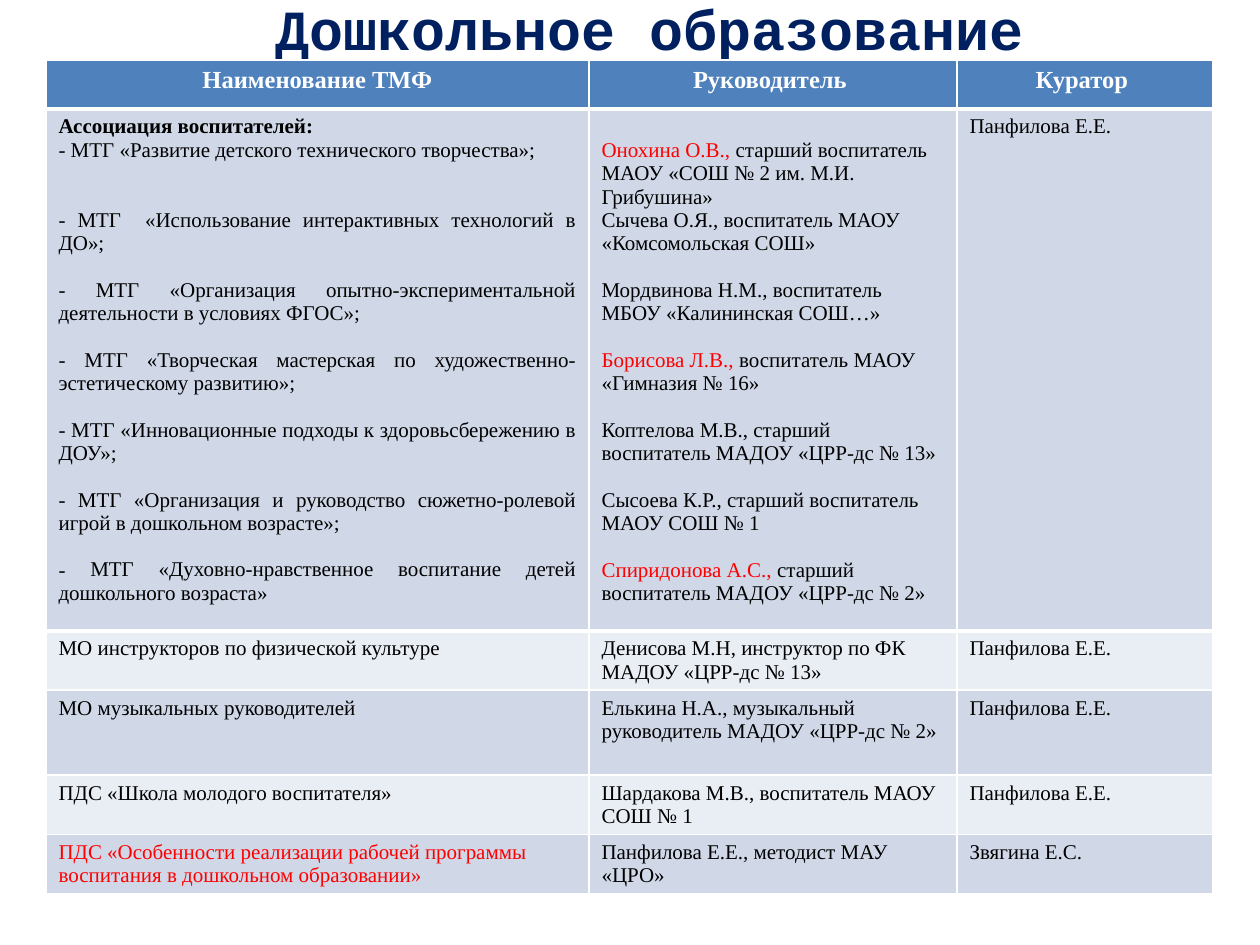
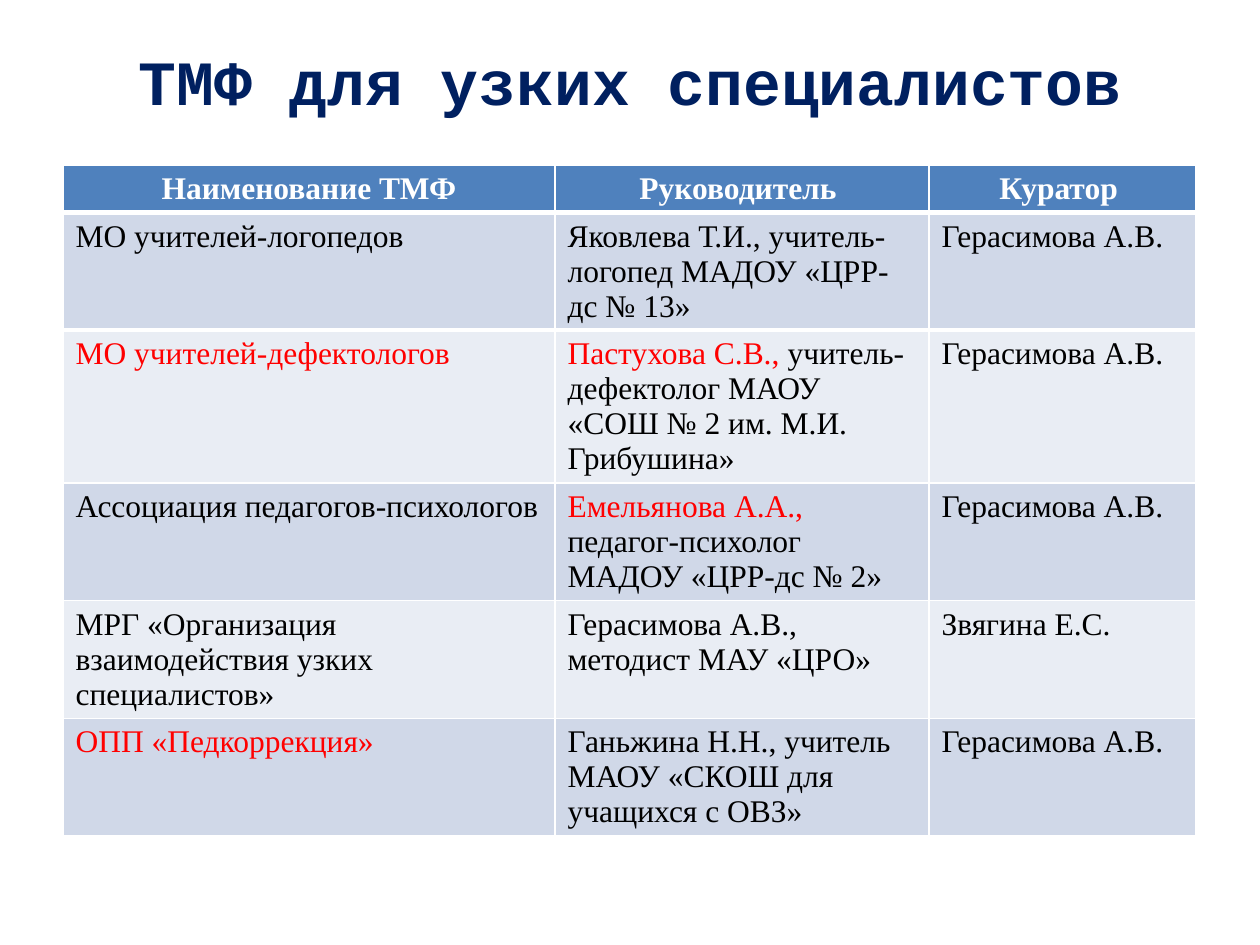
"""Build two slides listing teaching associations, their leaders and curators."""
from dataclasses import dataclass

from lxml.etree import SubElement
from pptx import Presentation
from pptx.dml.color import RGBColor as Rgb
from pptx.enum.text import MSO_ANCHOR as Anchor, PP_ALIGN as Align
from pptx.oxml import parse_xml
from pptx.oxml.ns import nsdecls, qn
from pptx.util import Emu, Pt

EMU_PER_PX = 914400 / 126
BLANK_LAYOUT = 6


@dataclass(frozen=True)
class Theme:
    title_font: str = "Courier New"
    body_font: str = "Times New Roman"
    navy: str = "002060"
    header: str = "4F81BD"
    bands: tuple = ("D0D8E8", "E9EDF4")
    white: str = "FFFFFF"
    black: str = "000000"
    red: str = "FF0000"
    compact_title: float = 32.4
    large_title: float = 36
    compact_body: float = 12
    large_body: float = 18
    compact_header: float = 14
    line_ratio: float = 1.11
    rule_width: int = 3


@dataclass(frozen=True)
class Line:
    text: str
    gap: int = 0
    bold: bool = False
    bullet: bool = False
    align: Align = Align.LEFT


def px(length):
    return Emu(round(length * EMU_PER_PX))


class SlideBuilder:
    def __init__(self, deck, theme):
        self.deck = deck
        self.theme = theme
        self.slide = None

    def new_slide(self):
        self.slide = self.deck.slides.add_slide(self.deck.slide_layouts[BLANK_LAYOUT])

    def style(self, span, font_name, size, color, bold):
        font = span.font
        font.name, font.size, font.bold = font_name, Pt(size), bold
        font.color.rgb = Rgb.from_string(color)

    def title(self, text, place, size):
        box = self.slide.shapes.add_textbox(*map(px, place))
        frame = box.text_frame
        frame.word_wrap = True
        frame.vertical_anchor = Anchor.MIDDLE
        frame.text = text
        para = frame.paragraphs[0]
        para.alignment = Align.CENTER
        self.style(para.runs[0], self.theme.title_font, size, self.theme.navy, True)

    def line(self, para, line, size, color):
        line_height = size * self.theme.line_ratio
        para.alignment = line.align
        para.line_spacing = Pt(line_height)
        para.space_before = Pt(line.gap * line_height)
        if line.bullet:
            properties = para._p.get_or_add_pPr()
            properties.set("marL", "0")
            properties.set("indent", "0")
            SubElement(properties, qn("a:buFont")).set("typeface", self.theme.body_font)
            SubElement(properties, qn("a:buChar")).set("char", "-")
        for index, part in enumerate(line.text.split("*")):
            if part:
                span = para.add_run()
                span.text = part
                span_color = self.theme.red if index % 2 else color
                self.style(span, self.theme.body_font, size, span_color, line.bold)

    def cell(self, cell, lines, size, color, fill):
        cell.fill.solid()
        cell.fill.fore_color.rgb = Rgb.from_string(fill)
        frame = cell.text_frame
        for index, line in enumerate(lines):
            para = frame.add_paragraph() if index else frame.paragraphs[0]
            self.line(para, line, size, color)

    def rule(self, cell, side):
        edge = parse_xml(
            f'<a:{side} {nsdecls("a")} w="{Pt(self.theme.rule_width)}"><a:solidFill>'
            f'<a:srgbClr val="{self.theme.white}"/></a:solidFill></a:{side}>')
        cell._tc.get_or_add_tcPr().insert(0, edge)

    def table(self, corner, widths, heights, rows, header_size, body_size):
        theme = self.theme
        size = (sum(widths), sum(heights))
        frame = self.slide.shapes.add_table(
            len(heights), len(widths), *map(px, (*corner, *size)))
        table = frame.table
        for column, width in zip(table.columns, widths):
            column.width = px(width)
        for row, height in zip(table.rows, heights):
            row.height = px(height)
        for column, text in enumerate(HEADINGS):
            heading = Line(text, bold=True, align=Align.CENTER)
            self.cell(table.cell(0, column), [heading], header_size,
                      theme.white, theme.header)
            self.rule(table.cell(0, column), "lnB")
            self.rule(table.cell(1, column), "lnT")
        for number, entries in enumerate(rows, 1):
            fill = theme.bands[(number - 1) % 2]
            for column, entry in enumerate(entries):
                lines = [Line(entry)] if isinstance(entry, str) else entry
                self.cell(table.cell(number, column), lines, body_size,
                          theme.black, fill)
        return table


def group_line(text, gap=1):
    return Line(f" МТГ {text}", gap, bullet=True, align=Align.JUSTIFY)


HEADINGS = ("Наименование ТМФ", "Руководитель ", "Куратор ")
PRESCHOOL_CURATOR = "Панфилова Е.Е."
SPECIALIST_CURATOR = "Герасимова А.В."
HEAD_CURATOR = "Звягина Е.С."

EDUCATOR_GROUPS = [
    Line("Ассоциация воспитателей:", bold=True, align=Align.JUSTIFY),
    group_line("«Развитие детского технического творчества»;", gap=0),
    group_line(" «Использование интерактивных технологий в ДО»;", gap=2),
    group_line("«Организация опытно-экспериментальной деятельности в условиях ФГОС»;"),
    group_line("«Творческая мастерская по художественно-эстетическому развитию»;"),
    group_line("«Инновационные подходы к здоровьсбережению в ДОУ»;"),
    group_line("«Организация и руководство сюжетно-ролевой игрой в дошкольном возрасте»;"),
    group_line("«Духовно-нравственное воспитание детей дошкольного возраста»"),
]
GROUP_LEADERS = [
    Line("*Онохина О.В.,* старший воспитатель МАОУ «СОШ № 2 им. М.И. Грибушина»"),
    Line("Сычева О.Я., воспитатель МАОУ «Комсомольская СОШ»"),
    Line("Мордвинова Н.М., воспитатель МБОУ «Калининская СОШ…»", 1),
    Line("*Борисова Л.В., *воспитатель МАОУ «Гимназия № 16»", 1),
    Line("Коптелова М.В., старший воспитатель МАДОУ «ЦРР-дс № 13»", 1),
    Line("Сысоева К.Р., старший воспитатель МАОУ СОШ № 1", 1),
    Line("*Спиридонова А.С., *старший воспитатель МАДОУ «ЦРР-дс № 2»", 1),
]
PRESCHOOL_ROWS = [
    (EDUCATOR_GROUPS, GROUP_LEADERS, PRESCHOOL_CURATOR),
    ("МО инструкторов по физической культуре",
     "Денисова М.Н, инструктор по ФК МАДОУ «ЦРР-дс № 13»", PRESCHOOL_CURATOR),
    ("МО музыкальных руководителей",
     "Елькина Н.А., музыкальный руководитель МАДОУ «ЦРР-дс № 2»", PRESCHOOL_CURATOR),
    ("ПДС «Школа молодого воспитателя»",
     "Шардакова М.В., воспитатель МАОУ СОШ № 1", PRESCHOOL_CURATOR),
    ("*ПДС «Особенности реализации рабочей программы воспитания "
     "в дошкольном образовании»*",
     "Панфилова Е.Е., методист МАУ «ЦРО»", HEAD_CURATOR),
]
SPECIALIST_ROWS = [
    ("МО учителей-логопедов",
     "Яковлева Т.И., учитель-логопед МАДОУ «ЦРР-дс № 13»", SPECIALIST_CURATOR),
    ("*МО учителей-дефектологов*",
     "*Пастухова С.В.,* учитель-дефектолог МАОУ «СОШ № 2 им. М.И. Грибушина»",
     SPECIALIST_CURATOR),
    ("Ассоциация педагогов-психологов",
     "*Емельянова А.А.,* педагог-психолог МАДОУ «ЦРР-дс № 2»", SPECIALIST_CURATOR),
    ("МРГ «Организация взаимодействия узких специалистов»",
     "Герасимова А.В., методист МАУ «ЦРО»", HEAD_CURATOR),
    ("*ОПП «Педкоррекция»*",
     "Ганьжина Н.Н., учитель МАОУ «СКОШ для учащихся с ОВЗ»", SPECIALIST_CURATOR),
]


def main():
    deck = Presentation()
    deck.slide_width, deck.slide_height = px(1260), px(945)
    theme = Theme()
    builder = SlideBuilder(deck, theme)

    builder.new_slide()
    builder.title("Дошкольное образование", (69, 0, 1162, 56), theme.compact_title)
    preschool = builder.table((46, 60), (543, 368, 256), (49, 522, 59, 85, 59, 59),
                              PRESCHOOL_ROWS, theme.compact_header, theme.compact_body)
    preschool.cell(1, 1).margin_top = px(30)

    builder.new_slide()
    builder.title("ТМФ для узких специалистов", (0, 45, 1260, 70), theme.large_title)
    builder.table((63, 165), (492, 374, 267), (47, 117, 153, 117, 117, 117),
                  SPECIALIST_ROWS, theme.large_body, theme.large_body)

    deck.save("out.pptx")


if __name__ == "__main__":
    main()
